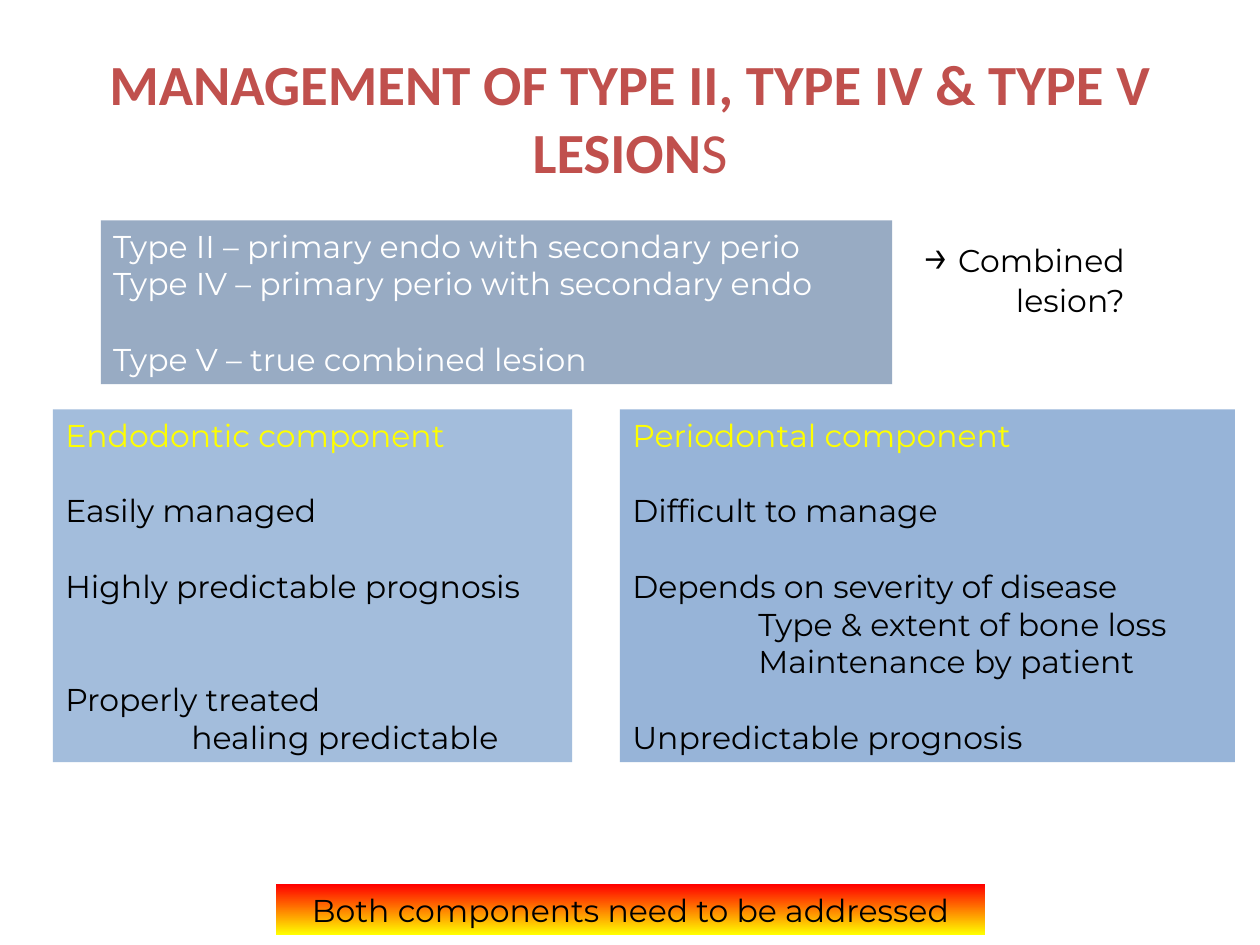
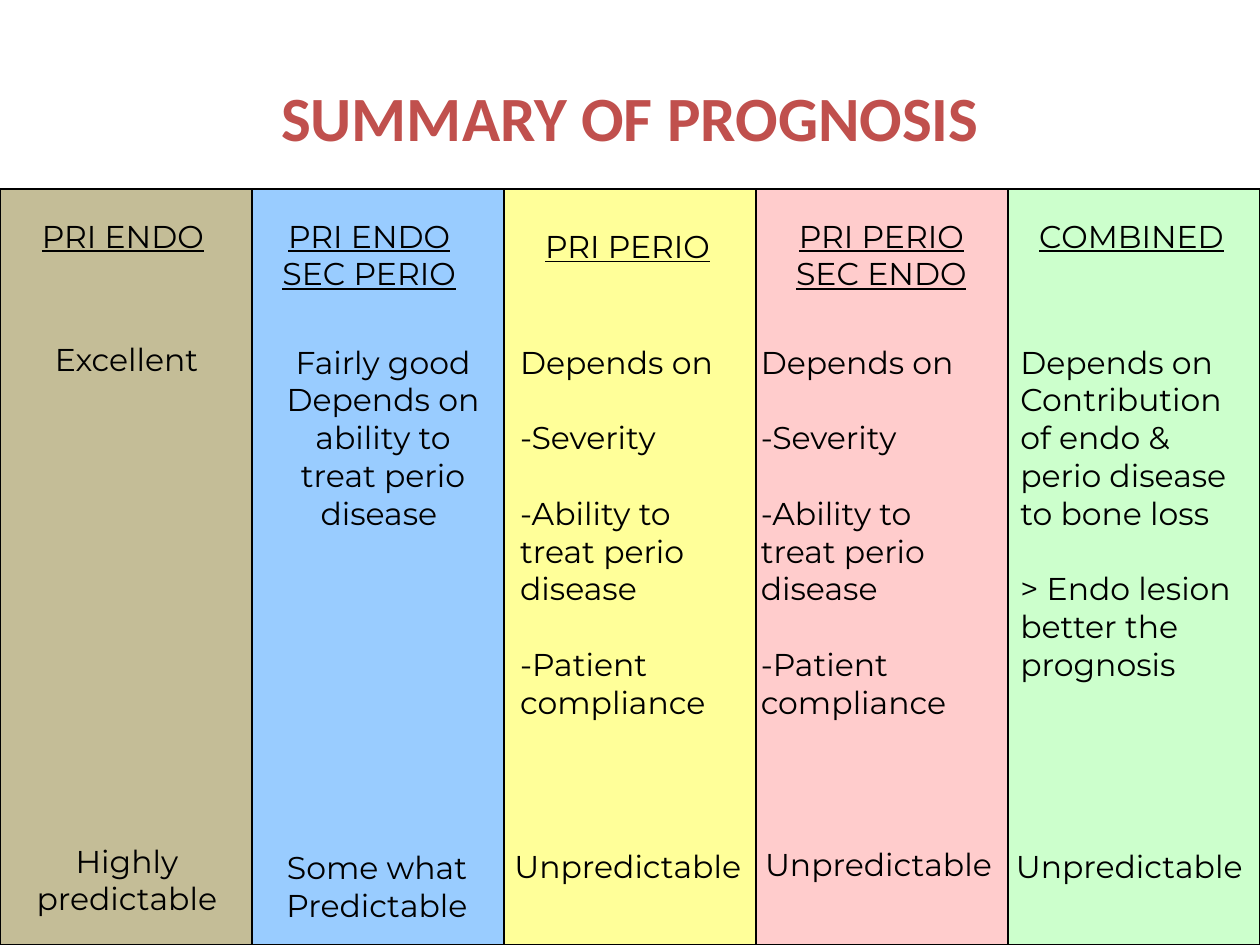
import pptx
import pptx.dml.color
import pptx.enum.shapes
import pptx.enum.text
import pptx.util
from lxml import etree

SLIDE_WIDTH, SLIDE_HEIGHT = 10, 7.5
COLUMN_WIDTH = SLIDE_WIDTH / 5
COLUMN_TOP = SLIDE_HEIGHT / 5
LINE_HEIGHT = 0.3
TEXT_INSET = 0.1
OUTLOOK_TOP = 2.67
BODY_SIZE = 18
TITLE_FONT, BODY_FONT = "Calibri", "Montserrat"
ALIGN = pptx.enum.text.PP_ALIGN
COLOURS = {
    "title": "C0504D",
    "text": "000000",
    "white": "FFFFFF",
    "heading": "FFFF00",
    "types": "1F497D",
    "component": "4F81BD",
    "banner top": "FF0000",
    "banner bottom": "FFFF00",
    "pri endo": "C4BD97",
    "endo perio": "99CCFF",
    "pri perio": "FFFF99",
    "perio endo": "FFCCCC",
    "combined": "CCFFCC",
}


def rgb(name):
    return pptx.dml.color.RGBColor.from_string(COLOURS[name])


def inches(*lengths):
    return [pptx.util.Inches(length) for length in lengths]


def text_height(line_count):
    return line_count * LINE_HEIGHT + TEXT_INSET


def add_text_box(slide, *place):
    box = slide.shapes.add_textbox(*inches(*place))
    box.text_frame.word_wrap = True
    return box


def add_rectangle(slide, *place):
    kind = pptx.enum.shapes.MSO_SHAPE.RECTANGLE
    shape = slide.shapes.add_shape(kind, *inches(*place))
    shape.shadow.inherit = False
    shape.line.fill.background()
    shape.text_frame.word_wrap = True
    shape.text_frame.vertical_anchor = pptx.enum.text.MSO_ANCHOR.TOP
    return shape


def fill_solid(shape, colour, opacity=100):
    shape.fill.solid()
    shape.fill.fore_color.rgb = rgb(colour)
    if opacity < 100:
        tag = pptx.oxml.ns.qn("a:srgbClr")
        colour_element = next(shape.fill._xPr.iter(tag))
        alpha = etree.SubElement(colour_element, pptx.oxml.ns.qn("a:alpha"))
        alpha.set("val", str(opacity * 1000))


def add_run(paragraph, text, size=BODY_SIZE, colour="text", font=BODY_FONT,
            bold=False, underline=False):
    run = paragraph.add_run()
    run.text = text
    run.font.size = pptx.util.Pt(size)
    run.font.name = font
    run.font.color.rgb = rgb(colour)
    run.font.bold = bold
    run.font.underline = underline


def next_paragraph(shape):
    """Return the unused first paragraph, or a new one after the last."""
    last = shape.text_frame.paragraphs[-1]
    return shape.text_frame.add_paragraph() if last.runs else last


def write_lines(shape, lines, align=ALIGN.LEFT, **style):
    """Write paragraphs; a line is text, or (text, lines skipped before, indent)."""
    for line in lines:
        text, skipped, indent = (line, 0, 0) if isinstance(line, str) else line
        paragraph = next_paragraph(shape)
        paragraph.alignment = align
        paragraph.space_before = pptx.util.Inches(skipped * LINE_HEIGHT)
        if indent:
            paragraph._p.get_or_add_pPr().set("marL", str(pptx.util.Inches(indent)))
        add_run(paragraph, text, **style)


def add_title(slide, size, bold_text, plain_text=""):
    box = add_text_box(slide, 0.5, 0.3, SLIDE_WIDTH - 1, 1.25)
    box.text_frame.vertical_anchor = pptx.enum.text.MSO_ANCHOR.MIDDLE
    paragraph = next_paragraph(box)
    paragraph.alignment = ALIGN.CENTER
    add_run(paragraph, bold_text, size, "title", TITLE_FONT, bold=True)
    if plain_text:
        add_run(paragraph, plain_text, size, "title", TITLE_FONT)


def add_component(slide, left, width, opacity, heading, lines):
    panel = add_rectangle(slide, left, 3.25, width, text_height(9))
    fill_solid(panel, "component", opacity)
    write_lines(panel, [heading], colour="heading")
    write_lines(panel, lines)


def add_banner(slide, text):
    banner = add_rectangle(slide, 2.19, 7.02, 5.63, text_height(1))
    banner.fill.gradient()
    banner.fill.gradient_angle = 270
    for stop, colour in zip(banner.fill.gradient_stops, ("banner top", "banner bottom")):
        stop.color.rgb = rgb(colour)
    write_lines(banner, [text], ALIGN.CENTER)


def add_column_panel(slide, index, colour):
    panel = add_rectangle(slide, index * COLUMN_WIDTH, COLUMN_TOP,
                          COLUMN_WIDTH, SLIDE_HEIGHT - COLUMN_TOP)
    fill_solid(panel, colour)
    panel.line.color.rgb = rgb("text")
    panel.line.width = pptx.util.Pt(1)


def add_column_text(slide, index, place, lines, align=ALIGN.CENTER, **style):
    """Add text at (offset from the column's left, top, width)."""
    offset, top, width = place
    box = add_text_box(slide, index * COLUMN_WIDTH + offset, top, width,
                       text_height(len(lines)))
    write_lines(box, lines, align, **style)


def build_management(slide):
    add_title(slide, 32.4, "MANAGEMENT OF TYPE II, TYPE IV & TYPE V LESION", "S")

    types = add_rectangle(slide, 0.8, 1.75, 6.28, text_height(4))
    fill_solid(types, "types", 46)
    write_lines(types, [
        "Type II – primary endo with secondary perio",
        "Type IV – primary perio with secondary endo",
        ("Type V – true combined lesion", 1, 0),
    ], colour="white")

    question = add_text_box(slide, 7, 1.75, 2.09, 0.84)
    paragraph = next_paragraph(question)
    paragraph.alignment = ALIGN.RIGHT
    add_run(paragraph, "→", 26)
    add_run(paragraph, " Combined ")
    write_lines(question, ["lesion? "], ALIGN.RIGHT)

    add_component(slide, 0.42, 4.12, 52, "Endodontic component", [
        ("Easily managed", 1, 0),
        ("Highly predictable prognosis", 1, 0),
        ("Properly treated", 2, 0),
        ("healing predictable", 0, 1),
    ])
    add_component(slide, 4.92, 4.88, 59, "Periodontal component", [
        ("Difficult to manage", 1, 0),
        ("Depends on severity of disease", 1, 0),
        ("Type & extent of bone loss", 0, 1),
        ("Maintenance by patient", 0, 1),
        ("Unpredictable prognosis", 1, 0),
    ])
    add_banner(slide, "Both components need to be addressed")


def build_prognosis(slide):
    panels = ["pri endo", "endo perio", "pri perio", "perio endo", "combined"]
    for index, colour in enumerate(panels):
        add_column_panel(slide, index, colour)
    add_title(slide, 36, "SUMMARY OF PROGNOSIS")

    headings = [
        ((0.2, 1.67, 1.55), ["PRI ENDO"]),
        ((0.08, 1.67, 1.7), ["PRI ENDO", "SEC PERIO"]),
        ((0.17, 1.75, 1.62), ["PRI PERIO"]),
        ((0.18, 1.67, 1.63), ["PRI PERIO", "SEC ENDO"]),
        ((0.12, 1.67, 1.72), ["COMBINED"]),
    ]
    perio_factors = [
        "Depends on",
        ("-Severity", 1, 0),
        ("-Ability to", 1, 0),
        "treat perio disease",
        ("-Patient compliance", 1, 0),
    ]
    outlooks = [
        ((0.26, 2.65, 1.49), ["Excellent"], ALIGN.CENTER),
        ((0.08, OUTLOOK_TOP, 1.92),
         ["Fairly good", "Depends on ability to treat perio disease "], ALIGN.CENTER),
        ((0.03, OUTLOOK_TOP, 1.97), perio_factors, ALIGN.LEFT),
        ((-0.06, OUTLOOK_TOP, 1.97), perio_factors, ALIGN.LEFT),
        ((0, OUTLOOK_TOP, 2), [
            "Depends on",
            "Contribution of endo & perio disease to bone loss",
            ("> Endo lesion better the prognosis", 1, 0),
        ], ALIGN.LEFT),
    ]
    unpredictable = ["Unpredictable "]
    verdicts = [
        ((0.12, 6.63, 1.84), ["Highly ", "predictable "]),
        ((0.1, 6.68, 1.85), ["Some what ", "Predictable "]),
        ((-0.08, 6.67, 2.19), unpredictable),
        ((-0.09, 6.66, 2.19), unpredictable),
        ((-0.1, 6.67, 2.19), unpredictable),
    ]
    for index, (place, lines) in enumerate(headings):
        add_column_text(slide, index, place, lines, underline=True)
    for index, (place, lines, align) in enumerate(outlooks):
        add_column_text(slide, index, place, lines, align)
    for index, (place, lines) in enumerate(verdicts):
        add_column_text(slide, index, place, lines)


def main():
    presentation = pptx.Presentation()
    presentation.slide_width, presentation.slide_height = inches(SLIDE_WIDTH, SLIDE_HEIGHT)
    blank_layout = presentation.slide_layouts[6]
    for build in (build_management, build_prognosis):
        build(presentation.slides.add_slide(blank_layout))
    presentation.save("out.pptx")


if __name__ == "__main__":
    main()
